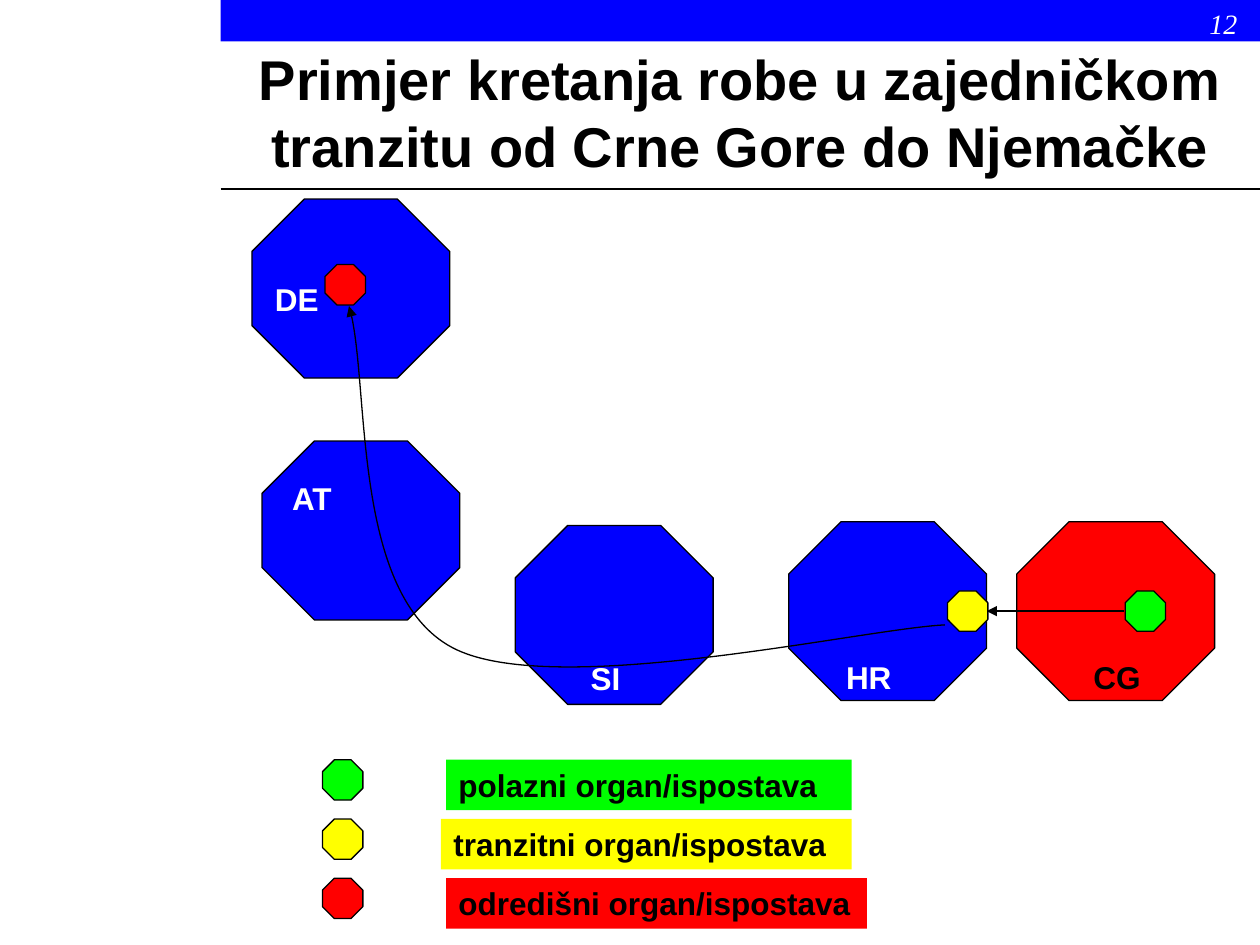
import pptx
import pptx.dml.color
import pptx.enum.shapes
import pptx.enum.text
import pptx.oxml
import pptx.oxml.ns
import pptx.util
from pptx.util import Inches

RGBColor = pptx.dml.color.RGBColor
MSO_SHAPE = pptx.enum.shapes.MSO_SHAPE
PP_ALIGN = pptx.enum.text.PP_ALIGN
qn = pptx.oxml.ns.qn

BLACK = RGBColor(0x00, 0x00, 0x00)
WHITE = RGBColor(0xFF, 0xFF, 0xFF)
BLUE = RGBColor(0x00, 0x00, 0xFF)
RED = RGBColor(0xFF, 0x00, 0x00)
GREEN = RGBColor(0x00, 0xFF, 0x00)
YELLOW = RGBColor(0xFF, 0xFF, 0x00)

COUNTRY_WIDTH, COUNTRY_HEIGHT = 1.57, 1.42
OFFICE_SIZE = 0.32
LABEL_HEIGHT = 0.4


def add_octagon(slide, left, top, width, height, color):
    """Draw an outlined octagon."""
    shape = slide.shapes.add_shape(
        MSO_SHAPE.OCTAGON, Inches(left), Inches(top), Inches(width), Inches(height))
    shape.adjustments[0] = 0.293
    shape.shadow.inherit = False
    shape.fill.solid()
    shape.fill.fore_color.rgb = color
    style_line(shape)


def add_office(slide, left, top, color):
    """Draw the small octagon of a customs office."""
    add_octagon(slide, left, top, OFFICE_SIZE, OFFICE_SIZE, color)


def add_text(slide, box, text, size=18, color=BLACK, font_name="Arial",
             italic=False, alignment=PP_ALIGN.LEFT, wrap=True, fill=None):
    """Place one paragraph of text in a box, bold unless italic."""
    shape = slide.shapes.add_textbox(*map(Inches, box))
    if fill is not None:
        shape.fill.solid()
        shape.fill.fore_color.rgb = fill
    shape.text_frame.word_wrap = wrap
    paragraph = shape.text_frame.paragraphs[0]
    paragraph.text = text
    paragraph.alignment = alignment
    font = paragraph.font
    font.name, font.size = font_name, pptx.util.Pt(size)
    font.bold, font.italic = not italic, italic
    font.color.rgb = color


def style_line(shape, arrow=False):
    """Give a shape a thin black line, with an arrowhead at its end if asked."""
    shape.line.color.rgb = BLACK
    shape.line.width = pptx.util.Pt(0.75)
    if arrow:
        line = shape.line._get_or_add_ln()
        pptx.oxml.ns.nsdecls("a")
        line.append(pptx.oxml.parse_xml(
            f'<a:tailEnd {pptx.oxml.ns.nsdecls("a")} type="triangle"/>'))


def add_straight(slide, start, end, arrow=False):
    """Draw a straight line between two points."""
    connector = slide.shapes.add_connector(
        pptx.enum.shapes.MSO_CONNECTOR.STRAIGHT, *map(Inches, (*start, *end)))
    style_line(connector, arrow)
    connector.element.spPr.append(pptx.oxml.parse_xml(
        f'<a:effectLst {pptx.oxml.ns.nsdecls("a")}/>'))


def add_curve(slide, start, controls):
    """Draw an arrow of cubic curves, each given by three points."""
    builder = slide.shapes.build_freeform(*map(Inches, start))
    builder.add_line_segments(
        [tuple(map(Inches, point)) for point in controls], close=False)
    shape = builder.convert_to_shape()
    shape.shadow.inherit = False
    shape.fill.background()
    style_line(shape, arrow=True)
    segments = list(shape.element.iter(qn("a:lnTo")))
    for first in range(0, len(segments), 3):
        curve, *others = segments[first:first + 3]
        curve.tag = qn("a:cubicBezTo")
        for segment in others:
            curve.append(segment[0])
            segment.getparent().remove(segment)


def add_header(slide, left, top, width):
    """Place the blue band, page number, title and rule."""
    band = slide.shapes.add_shape(
        MSO_SHAPE.RECTANGLE, Inches(left), Inches(top), Inches(width), Inches(0.33))
    band.shadow.inherit = False
    band.fill.solid()
    band.fill.fore_color.rgb = BLUE
    band.line.fill.background()
    add_text(slide, (left, top + 0.3, width, 1.18),
             "Primjer kretanja robe u zajedničkom tranzitu od Crne Gore do Njemačke",
             size=32, alignment=PP_ALIGN.CENTER)
    add_straight(slide, (left, top + 1.5), (left + width, top + 1.5))
    add_text(slide, (left + width - 0.5, top, 0.5, 0.37), "12", size=16,
             color=WHITE, font_name="Times New Roman", italic=True)


def add_route(slide, left, top):
    """Place the countries, their offices and the route of the goods."""
    countries = [
        ("DE", 0, 0, 0.08, 0.59, 0.55, BLUE, WHITE),
        ("SI", 2.09, 2.59, 0.24, 1.01, 0.95, BLUE, WHITE),
        ("CG", 6.07, 2.56, 0.32, 1.03, 0.95, RED, BLACK),
        ("AT", 0.08, 1.92, -0.08, 0.25, 0.95, BLUE, WHITE),
        ("HR", 4.26, 2.56, 0.16, 1.03, 0.95, BLUE, WHITE),
    ]
    for _, x, y, _, _, _, fill, _ in countries:
        add_octagon(slide, left + x, top + y, COUNTRY_WIDTH, COUNTRY_HEIGHT, fill)

    add_office(slide, left + 6.93, top + 3.11, GREEN)
    add_straight(slide, (left + 6.92, top + 3.27), (left + 5.83, top + 3.27), arrow=True)
    controls = [(4.85, 3.41), (2.38, 3.98), (1.59, 3.56),
                (0.8, 3.14), (0.94, 1.41), (0.77, 0.85)]
    add_curve(slide, (left + 5.5, top + 3.38),
              [(left + x, top + y) for x, y in controls])
    add_office(slide, left + 5.52, top + 3.11, YELLOW)
    add_office(slide, left + 0.58, top + 0.52, RED)

    for name, x, y, label_x, label_y, width, _, color in countries:
        add_text(slide, (left + x + label_x, top + y + label_y, width, LABEL_HEIGHT),
                 name, color=color, alignment=PP_ALIGN.CENTER, wrap=name != "DE")


def add_legend(slide, left, top):
    """Place one row for each kind of office."""
    rows = [
        ("polazni organ/ispostava", GREEN, 0.98, 3.22),
        ("tranzitni organ/ispostava", YELLOW, 0.94, 3.26),
        ("odredišni organ/ispostava", RED, 0.98, 3.34),
    ]
    for index, (text, color, offset, width) in enumerate(rows):
        row_top = top + index * 0.47
        add_office(slide, left, row_top, color)
        add_text(slide, (left + offset, row_top, width, LABEL_HEIGHT),
                 text, wrap=False, fill=color)


def main():
    """Build the slide and save it."""
    presentation = pptx.Presentation()
    presentation.slide_width = Inches(10)
    presentation.slide_height = Inches(7.5)
    slide = presentation.slides.add_slide(presentation.slide_layouts[6])
    add_header(slide, 1.75, 0, 8.25)
    add_route(slide, 2, 1.58)
    add_legend(slide, 2.56, 6.03)
    presentation.save("out.pptx")


if __name__ == "__main__":
    main()
